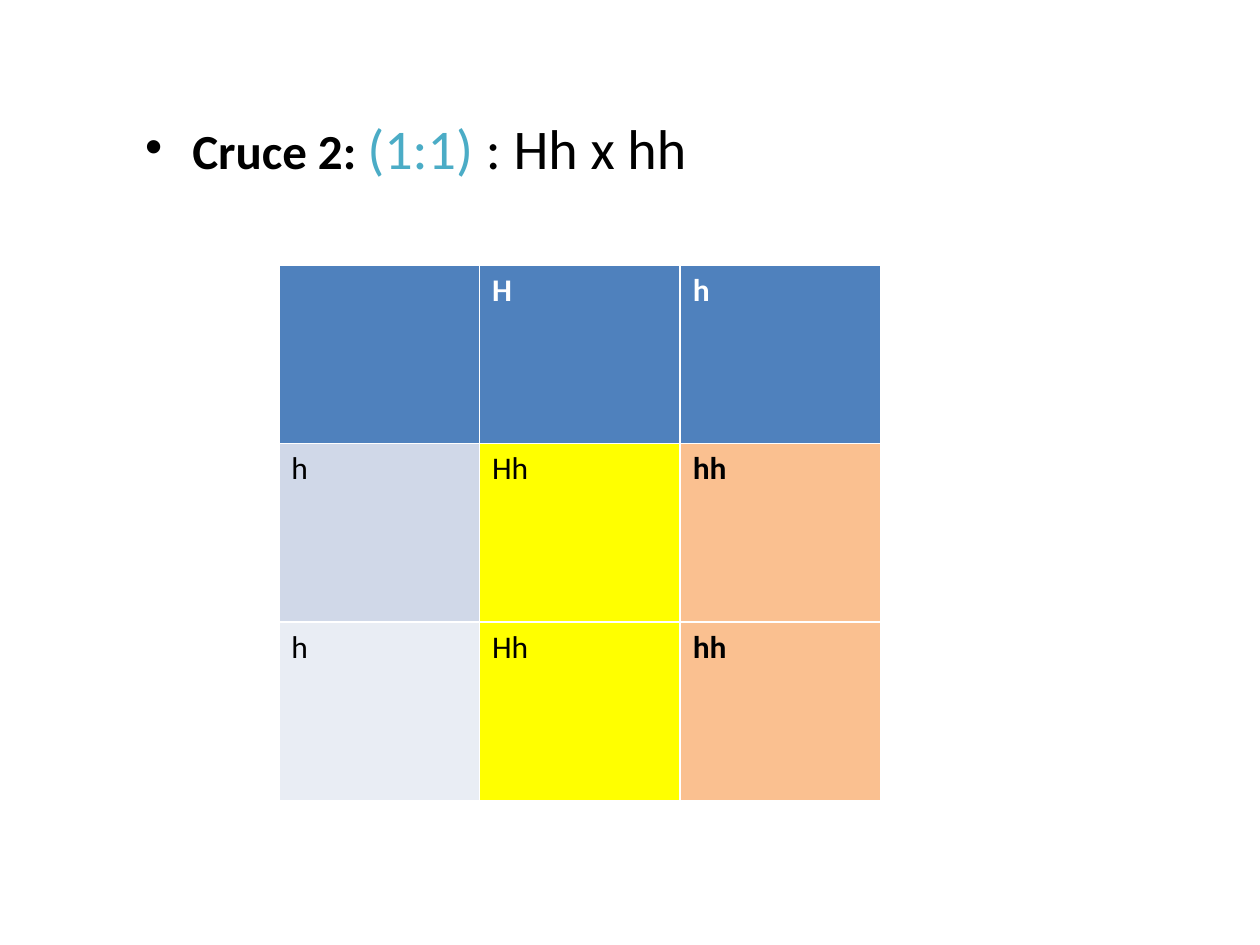
from pptx import Presentation
from pptx.dml.color import RGBColor
from pptx.util import Cm, Pt

BLACK = RGBColor(0x00, 0x00, 0x00)
WHITE = RGBColor(0xFF, 0xFF, 0xFF)
TEAL = RGBColor(0x4B, 0xAC, 0xC6)
BLUE = RGBColor(0x4F, 0x81, 0xBD)
BAND_DARK = RGBColor(0xD0, 0xD8, 0xE8)
BAND_LIGHT = RGBColor(0xE9, 0xED, 0xF4)
YELLOW = RGBColor(0xFF, 0xFF, 0x00)
ORANGE = RGBColor(0xFA, 0xC0, 0x90)
FONT = "Calibri"

prs = Presentation()
prs.slide_width, prs.slide_height = Cm(25.4), Cm(19.05)
s = prs.slides.add_slide(prs.slide_layouts[1])
title = s.shapes.title
title.element.getparent().remove(title.element)

# Cross heading
body = s.placeholders[1]
body.left, body.top, body.width, body.height = Cm(2.67), Cm(2.16), Cm(20.09), Cm(11.91)
p = body.text_frame.paragraphs[0]
for text, size, color, bold in [
    ("Cruce 2: ", 28, BLACK, True),
    ("(1:1) ", 32, TEAL, False),
    (": Hh x hh", 32, BLACK, False),
]:
    r = p.add_run()
    r.text = text
    r.font.name = FONT
    r.font.size = Pt(size)
    r.font.bold = bold
    r.font.color.rgb = color

# Punnett square; the default table style supplies the white borders
genotypes = [["", "H", "h"], ["h", "Hh", "hh"], ["h", "Hh", "hh"]]
fills = [[BLUE] * 3, [BAND_DARK, YELLOW, ORANGE], [BAND_LIGHT, YELLOW, ORANGE]]
table = s.shapes.add_table(3, 3, Cm(5.62), Cm(5.34), Cm(12.14), Cm(10.8)).table
for i, row in enumerate(genotypes):
    for j, text in enumerate(row):
        cell = table.cell(i, j)
        cell.fill.solid()
        cell.fill.fore_color.rgb = fills[i][j]
        cell.text = text
        font = cell.text_frame.paragraphs[0].font
        font.name = FONT
        font.size = Pt(18)
        font.bold = i == 0 or j == 2
        font.color.rgb = WHITE if i == 0 else BLACK

prs.save("out.pptx")
